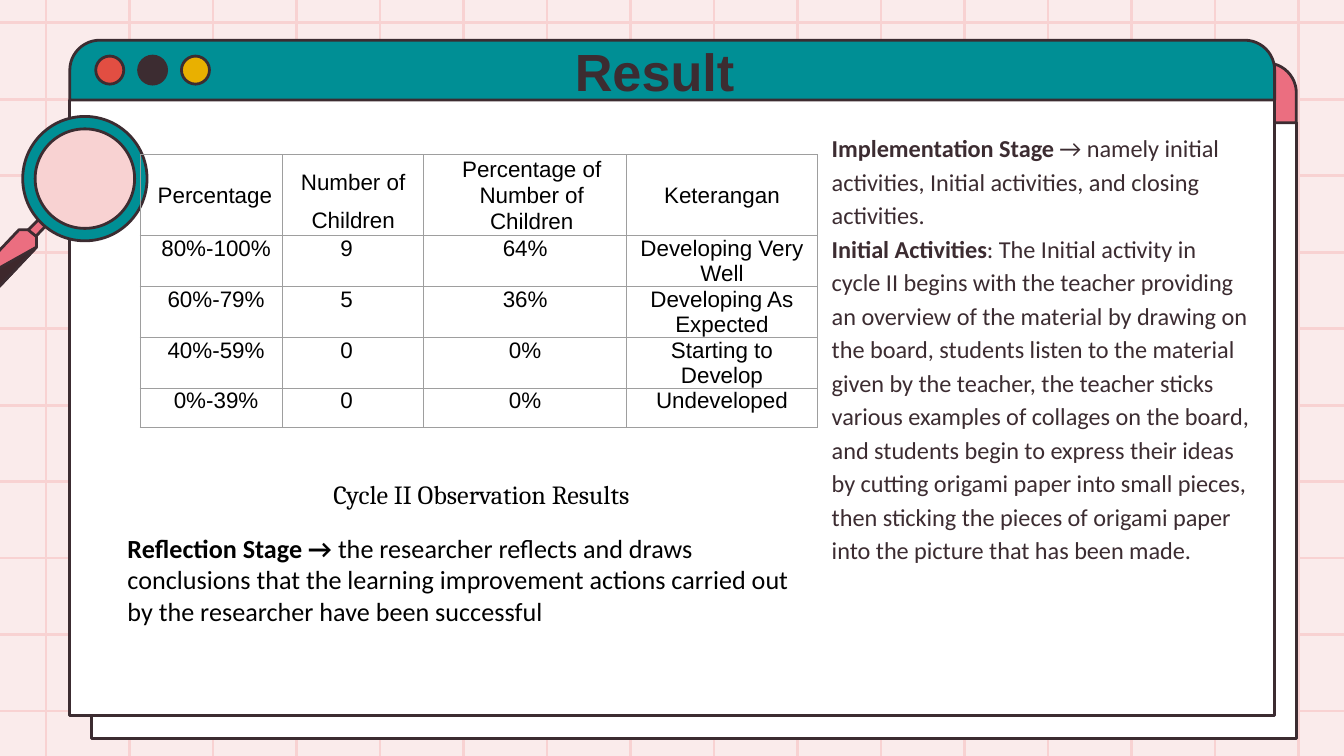
from lxml.etree import SubElement
from pptx import Presentation
from pptx.dml.color import RGBColor
from pptx.enum.shapes import MSO_CONNECTOR, MSO_SHAPE
from pptx.enum.text import MSO_ANCHOR, PP_ALIGN
from pptx.oxml.ns import qn
from pptx.util import Cm, Pt

INK, TEAL, PINK, BLUSH = "3C2C31", "008F95", "EB6E80", "F8D2D2"
RED, GOLD, WHITE, BLACK, GREY = "E24E42", "E9B000", "FFFFFF", "000000", "9E9E9E"
WIDE, HIGH = 25.4, 14.28


def rgb(code):
    return RGBColor.from_string(code)


def write(par, text, lead="", size=12, font="Arial", color=BLACK, bold=False,
          align=PP_ALIGN.LEFT, gap=None, above=0, left=0, right=0):
    """Fill a paragraph with an optional bold lead and the text."""
    par.alignment = align
    par.space_before = Pt(above)
    if gap:
        par.line_spacing = gap
    props = par._p.get_or_add_pPr()
    props.set("marL", str(Cm(left)))
    props.set("marR", str(Cm(right)))
    props.set("indent", "0")
    for words, heavy in ((lead, True), (text, bold)):
        if words:
            run = par.add_run()
            run.text = words
            run.font.size = Pt(size)
            run.font.name = font
            run.font.bold = heavy
            run.font.color.rgb = rgb(color)


class Deck:
    def __init__(self, slide):
        self.slide = slide
        self.shapes = slide.shapes
        self.edge = Pt(1.5)

    def paint(self, shape, color):
        shape.shadow.inherit = False
        shape.fill.solid()
        shape.fill.fore_color.rgb = rgb(color)
        shape.line.color.rgb = rgb(INK)
        shape.line.width = self.edge
        return shape

    def shape(self, kind, x, y, w, h, color):
        item = self.shapes.add_shape(kind, Cm(x), Cm(y), Cm(w), Cm(h))
        return self.paint(item, color)

    def shard(self, points, color):
        spots = [(Cm(x), Cm(y)) for x, y in points]
        pen = self.shapes.build_freeform(*spots[0], scale=1.0)
        pen.add_line_segments(spots[1:], close=True)
        return self.paint(pen.convert_to_shape(), color)

    def line(self, x1, y1, x2, y2):
        item = self.shapes.add_connector(
            MSO_CONNECTOR.STRAIGHT, Cm(x1), Cm(y1), Cm(x2), Cm(y2))
        item.line.color.rgb = rgb(BLUSH)
        item.line.width = self.edge
        SubElement(item.element.spPr, qn("a:effectLst"))

    def window(self, x, y, color, dots=()):
        self.shape(MSO_SHAPE.RECTANGLE, x, y + 1.13, 22.77, 11.63, WHITE)
        bar = self.shape(MSO_SHAPE.ROUND_2_SAME_RECTANGLE, x, y, 22.77, 1.13, color)
        bar.adjustments[0] = 0.5
        for i, dot in enumerate(dots):
            self.shape(MSO_SHAPE.OVAL, x + 0.49 + 0.81 * i, y + 0.3, 0.53, 0.53, dot)

    def title(self, text, x, y, w, h, **style):
        item = self.shapes.title
        item.left, item.top, item.width, item.height = Cm(x), Cm(y), Cm(w), Cm(h)
        item.text_frame.vertical_anchor = MSO_ANCHOR.MIDDLE
        write(item.text_frame.paragraphs[0], text, **style)
        item.element.getparent().append(item.element)  # bring to front

    def text(self, parts, x, y, w, h, **style):
        frame = self.shapes.add_textbox(Cm(x), Cm(y), Cm(w), Cm(h)).text_frame
        frame.word_wrap = True
        for i, (lead, rest) in enumerate(parts):
            par = frame.add_paragraph() if i else frame.paragraphs[0]
            write(par, rest, lead, **style)

    def cell(self, cell, text, **style):
        cell.margin_left = cell.margin_right = 0
        cell.margin_top = cell.margin_bottom = 0
        props = cell._tc.get_or_add_tcPr()
        for side in ("a:lnL", "a:lnR", "a:lnT", "a:lnB"):
            line = SubElement(props, qn(side), w=str(Pt(0.75)))
            fill = SubElement(line, qn("a:solidFill"))
            SubElement(fill, qn("a:srgbClr"), val=GREY)
        cell.fill.background()
        write(cell.text_frame.paragraphs[0], text, **style)

    def table(self, rows, x, y, cols, highs, heads, body):
        grid = self.shapes.add_table(
            len(rows), len(cols), Cm(x), Cm(y), Cm(sum(cols)), Cm(sum(highs))).table
        grid.first_row = grid.horz_banding = False
        for col, wide in zip(grid.columns, cols):
            col.width = Cm(wide)
        for r, row in enumerate(rows):
            grid.rows[r].height = Cm(highs[r])
            for c, text in enumerate(row):
                cell = grid.cell(r, c)
                style = {"align": PP_ALIGN.CENTER, "gap": Pt(13.6 if r else 13.8)}
                self.cell(cell, text, **{**style, **(body if r else heads)[c]})
                cell.vertical_anchor = MSO_ANCHOR.TOP if r else MSO_ANCHOR.MIDDLE


def main():
    prs = Presentation()
    prs.slide_width, prs.slide_height = Cm(WIDE), Cm(HIGH)
    deck = Deck(prs.slides.add_slide(prs.slide_layouts[5]))

    # Background grid
    back = deck.slide.background.fill
    back.solid()
    back.fore_color.rgb = rgb("FAEBEB")
    for i in range(16):
        x = 0.87 + 23.67 / 15 * i
        deck.line(x, HIGH, x, 0)
    for i in range(10):
        y = 0.43 + 13 / 9 * i
        deck.line(0, y, WIDE, y)

    # Two stacked windows and the title
    deck.window(1.73, 1.19, PINK)
    deck.window(1.32, 0.76, TEAL, (RED, INK, GOLD))
    deck.title("Result", 2.16, 0.53, 20.42, 1.6, size=28, color=INK,
               bold=True, align=PP_ALIGN.CENTER)

    # Magnifier
    deck.shard([(0.58, 4.57), (0.43, 4.45), (0.79, 4.09), (0.91, 4.22)], PINK)
    base = [(-0.58, 5.38), (-0.53, 5.49), (-0.41, 5.61), (-0.3, 5.66),
            (-0.2, 5.61), (0.69, 4.67)]
    deck.shard(base + [(0.69, 4.47), (0.53, 4.34), (0.36, 4.34), (-0.53, 5.28)], PINK)
    deck.shard(base, "3E282C")
    deck.shape(MSO_SHAPE.OVAL, 0.58, 2.34, 2.08, 2.08, BLUSH)
    ring = deck.shape(MSO_SHAPE.DONUT, 0.43, 2.2, 2.35, 2.35, TEAL)
    ring.adjustments[0] = 0.1

    # Texts
    deck.text([("", "Cycle II Observation Results")], 6.05, 8.92, 7.32, 0.86,
              size=14, font="Cambria")
    deck.text([
        ("Implementation Stage ", "→ namely initial activities, Initial activities, "
         "and closing activities."),
        ("Initial Activities", ": The Initial activity in cycle II begins with the "
         "teacher providing an overview of the material by drawing on the board, "
         "students listen to the material given by the teacher, the teacher sticks "
         "various examples of collages on the board, and students begin to express "
         "their ideas by cutting origami paper into small pieces, then sticking the "
         "pieces of origami paper into the picture that has been made."),
    ], 15.47, 2.31, 8.38, 9.2, size=13, font="Calibri", color=INK, gap=1.15)
    deck.text([("Reflection Stage → ", "the researcher reflects and draws conclusions "
                "that the learning improvement actions carried out by the researcher "
                "have been successful")],
              2.16, 9.93, 13.31, 2.06, size=14, font="Calibri")

    # Results table
    both = {"left": 0.23, "right": 0.23}
    deck.table([
        ("Percentage", "Number of Children", "Percentage of Number of Children",
         "Keterangan"),
        ("80%-100%", "9", "64%", "Developing Very Well"),
        ("60%-79%", "5", "36%", "Developing As Expected"),
        ("40%-59%", "0", "0%", "Starting to Develop"),
        ("0%-39%", "0", "0%", "Undeveloped"),
    ], 2.65, 2.92, [2.69, 2.67, 3.83, 3.61], [1.53, 0.96, 0.96, 0.96, 0.74],
        heads=[{"align": PP_ALIGN.LEFT, "left": 0.33}, {"gap": 1.5, "above": 6.8},
               {"left": 0.25}, both],
        body=[{"left": 0.18}, {"right": 0.25}, {}, both])

    prs.save("out.pptx")


if __name__ == "__main__":
    main()
